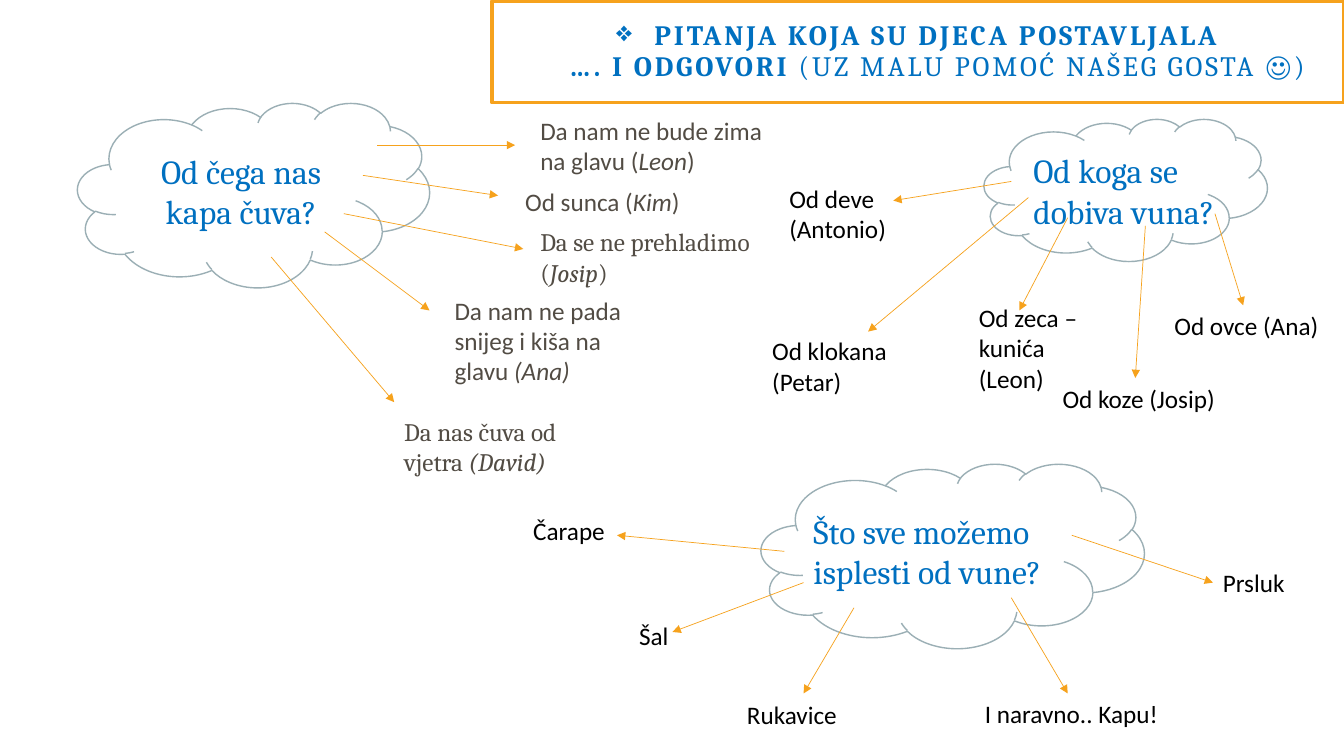
from lxml.etree import SubElement
from pptx import Presentation
from pptx.dml.color import RGBColor
from pptx.enum.shapes import MSO_CONNECTOR, MSO_SHAPE
from pptx.enum.text import MSO_ANCHOR, MSO_AUTO_SIZE, PP_ALIGN
from pptx.oxml.ns import qn
from pptx.util import Emu, Pt

PX = 9144
WHITE = RGBColor(0xFF, 0xFF, 0xFF)
BLACK = RGBColor(0x00, 0x00, 0x00)
BROWN = RGBColor(0x52, 0x4C, 0x44)
BLUE = RGBColor(0x00, 0x70, 0xC0)
ORANGE = RGBColor(0xF6, 0xA2, 0x1D)
GREY = RGBColor(0x9B, 0xAF, 0xB5)

QUESTION = {"name": "Cambria", "size": Pt(24)}
SERIF = {"name": "Cambria", "size": Pt(18)}
SANS = {"name": "Calibri", "size": Pt(18)}

CLOUDS = [(77, 102, 349, 183), (976, 118, 281, 141), (755, 460, 380, 183)]
QUESTIONS = [
    ((1015, 144, 218, 91), "Od koga se dobiva vuna?"),
    ((797, 502, 266, 91), "Što sve možemo isplesti od vune?"),
]
HAT_ANSWERS = [
    ((526, 109, 252, 71), SANS, "Da nam ne bude zima na glavu (", "Leon", ")"),
    ((511, 180, 232, 40), SANS, "Od sunca (", "Kim", ")"),
    ((526, 220, 232, 71), SERIF, "Da se ne prehladimo (", "Josip", ")"),
    ((441, 288, 216, 101), SANS, "Da nam ne pada snijeg i kiša na glavu ", "(Ana)", ""),
    ((391, 408, 179, 71), SERIF, "Da nas čuva od vjetra ", "(David)", ""),
]
WOOL_ANSWERS = [
    ((1155, 303, 176, 40), "Od ovce (Ana)"),
    ((1044, 375, 189, 40), "Od koze (Josip)"),
    ((961, 295, 146, 101), "Od zeca – kunića (Leon)"),
    ((773, 177, 145, 71), "Od deve (Antonio)"),
    ((756, 328, 182, 71), "Od klokana (Petar)"),
    ((519, 506, 180, 40), "Čarape"),
    ((624, 611, 180, 40), "Šal"),
    ((731, 689, 277, 40), "Rukavice"),
    ((967, 688, 277, 40), "I naravno.. Kapu!"),
]
ARROWS = [
    (1003, 180, 886, 199), (1136, 224, 1126, 375), (1020, 196, 861, 329),
    (1059, 216, 1011, 308), (1205, 212, 1233, 303),
    (374, 144, 511, 144), (360, 174, 494, 194), (341, 212, 519, 247),
    (322, 230, 426, 308), (269, 255, 391, 399),
    (778, 547, 612, 531), (797, 578, 667, 627), (847, 603, 797, 688),
    (1003, 593, 1059, 688),
]


def px(*lengths):
    """Turn pixel lengths into EMU."""
    return [Emu(length * PX) for length in lengths]


def apply(target, values):
    """Set each named format value on the target."""
    for name, value in values.items():
        setattr(target, name, value)


def add_run(paragraph, text, style, color, **extra):
    """Append a formatted run and return it."""
    run = paragraph.add_run()
    run.text = text
    apply(run.font, {**style, **extra})
    run.font.color.rgb = color
    return run


def outline(shape, color, width):
    """Give a shape a white fill and a coloured line."""
    shape.fill.solid()
    shape.fill.fore_color.rgb = WHITE
    shape.line.color.rgb = color
    shape.line.width = Pt(width)


def add_heading(slide):
    """Format the title placeholder as the framed heading."""
    heading = slide.shapes.title
    left, top, width, height = px(488, 1, 845, 101)
    apply(heading, {"left": left, "top": top, "width": width, "height": height})
    outline(heading, ORANGE, 2.5)
    inset = Emu(20 * PX)
    frame = heading.text_frame
    apply(frame, {
        "margin_left": inset, "margin_right": inset,
        "margin_top": inset, "margin_bottom": inset,
        "vertical_anchor": MSO_ANCHOR.MIDDLE,
        "word_wrap": True, "auto_size": MSO_AUTO_SIZE.NONE,
    })
    paragraph = frame.paragraphs[0]
    apply(paragraph, {"alignment": PP_ALIGN.CENTER, "line_spacing": 0.9})
    properties = paragraph._p.get_or_add_pPr()
    properties.set("marL", str(38 * PX))
    properties.set("indent", str(-38 * PX))
    SubElement(properties, qn("a:buChar")).set("char", "❖")
    style = {"name": "Cambria", "size": Pt(20)}
    runs = [add_run(paragraph, "PITANJA KOJA SU DJECA POSTAVLJALA", style, BLUE, bold=True)]
    paragraph.add_line_break()
    runs.append(add_run(paragraph, "…. I ODGOVORI ", style, BLUE, bold=True))
    runs.append(add_run(paragraph, "(UZ MALU POMOĆ NAŠEG GOSTA ☺)", style, BLUE, bold=False))
    for run in runs:
        run.font._element.set("spc", "200")


def add_cloud(slide, box):
    """Add an empty cloud."""
    cloud = slide.shapes.add_shape(MSO_SHAPE.CLOUD, *px(*box))
    cloud.shadow.inherit = False
    outline(cloud, GREY, 1)
    return cloud


def add_label(slide, box, style, color, text, child="", ending=""):
    """Add a text box, with the child's name in italics."""
    label = slide.shapes.add_textbox(*px(*box))
    apply(label.text_frame, {"word_wrap": True, "auto_size": MSO_AUTO_SIZE.SHAPE_TO_FIT_TEXT})
    paragraph = label.text_frame.paragraphs[0]
    for part, italic in ((text, False), (child, True), (ending, False)):
        if part:
            add_run(paragraph, part, style, color, italic=italic)
    return label


def add_arrow(slide, ends):
    """Add a thin arrow from a cloud to an answer."""
    arrow = slide.shapes.add_connector(MSO_CONNECTOR.STRAIGHT, *px(*ends))
    arrow.line.color.rgb = ORANGE
    arrow.line.width = Pt(0.5)
    SubElement(arrow.line._get_or_add_ln(), qn("a:tailEnd")).set("type", "triangle")
    SubElement(arrow._element.spPr, qn("a:effectLst"))
    return arrow


def main():
    """Build the slide of questions and answers."""
    deck = Presentation()
    deck.slide_width, deck.slide_height = px(1333, 750)
    slide = deck.slides.add_slide(deck.slide_layouts[5])
    add_heading(slide)
    hat_cloud = [add_cloud(slide, box) for box in CLOUDS][0]
    apply(hat_cloud.text_frame, {"word_wrap": True, "vertical_anchor": MSO_ANCHOR.MIDDLE})
    hat_question = hat_cloud.text_frame.paragraphs[0]
    hat_question.alignment = PP_ALIGN.CENTER
    add_run(hat_question, "Od čega nas kapa čuva?", QUESTION, BLUE)
    for box, text in QUESTIONS:
        add_label(slide, box, QUESTION, BLUE, text)
    for box, style, *parts in HAT_ANSWERS:
        add_label(slide, box, style, BROWN, *parts)
    for box, text in WOOL_ANSWERS:
        add_label(slide, box, SANS, BLACK, text)
    for ends in ARROWS:
        add_arrow(slide, ends)
    vest = add_label(slide, (1203, 558, 143, 40), SANS, BLACK, "Prsluk")
    add_arrow(slide, (1063, 531, 1203, 578)).end_connect(vest, 1)
    deck.save("out.pptx")


if __name__ == "__main__":
    main()
